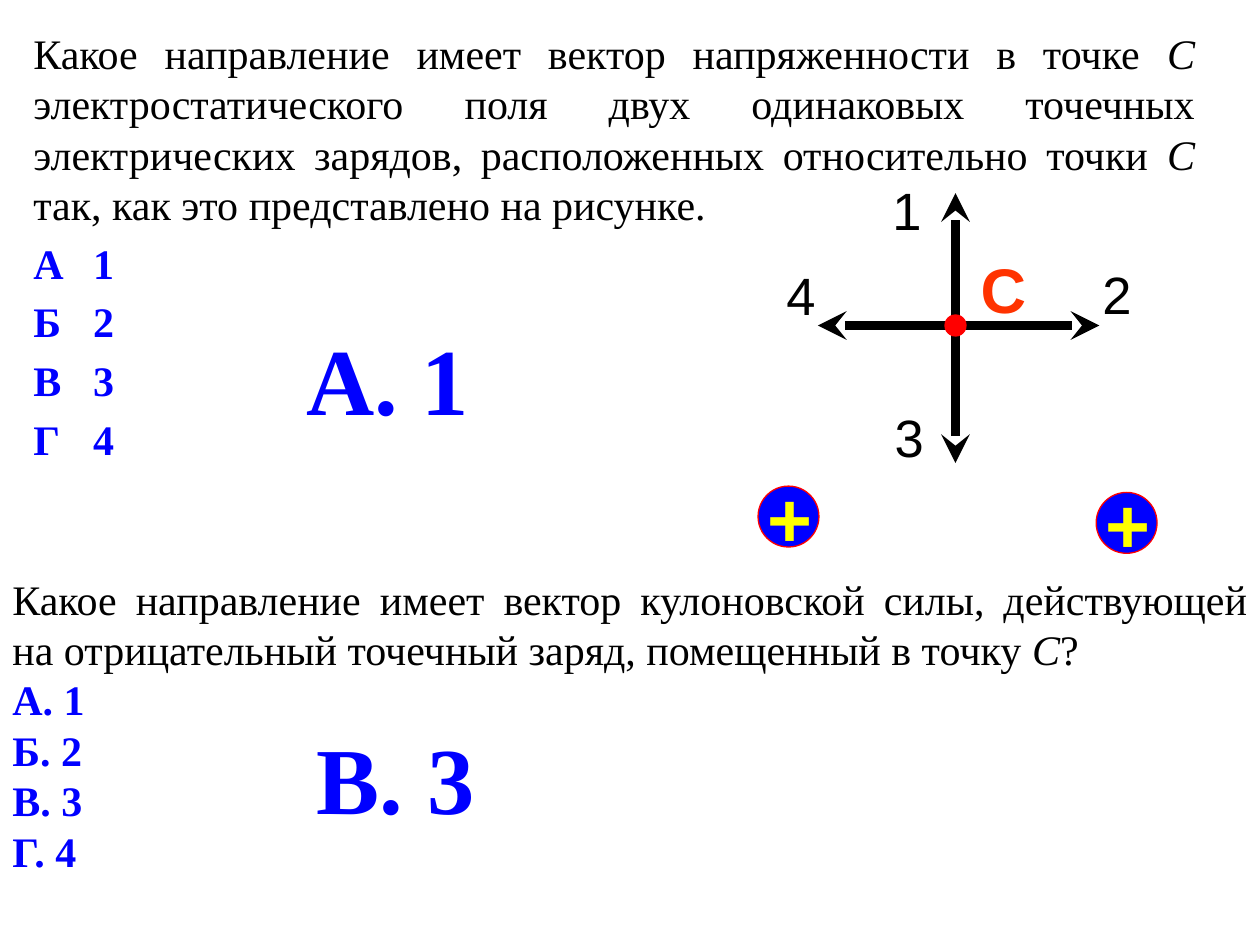
from dataclasses import dataclass

from lxml.etree import SubElement
from pptx import Presentation
from pptx.dml.color import RGBColor
from pptx.enum.shapes import MSO_CONNECTOR as Connector, MSO_SHAPE as Shape
from pptx.enum.text import MSO_ANCHOR as Anchor, PP_ALIGN as Align
from pptx.oxml.ns import qn
from pptx.util import Inches, Pt

COLUMNS, ROWS = 120, 90  # square grid cells, twelve to the inch


@dataclass(frozen=True)
class Theme:
    serif: str = "Times New Roman"
    sans: str = "Arial"
    black: str = "000000"
    blue: str = "0000FF"
    red: str = "FF0000"
    orange: str = "FF3300"
    yellow: str = "FFFF00"
    body: int = 24
    number: int = 30
    point: int = 36
    sign: int = 44
    answer: int = 54
    leading: float = 1.2


THEME = Theme()


def grid(*cells):
    return [Inches(cell * 10 / COLUMNS) for cell in cells]


def add_run(paragraph, text, size, color, font=THEME.serif, bold=False, italic=False):
    run = paragraph.add_run()
    run.text = text
    run.font.name = font
    run.font.size = Pt(size)
    run.font.bold = bold
    run.font.italic = italic
    run.font.color.rgb = RGBColor.from_string(color)


def add_box(slide, cells, wrap=True, margins=True):
    frame = slide.shapes.add_textbox(*grid(*cells)).text_frame
    frame.word_wrap = wrap
    if not margins:
        frame.margin_left = frame.margin_right = 0
        frame.margin_top = frame.margin_bottom = 0
    return frame


def add_tab_stop(paragraph, column):
    tabs = SubElement(paragraph._p.get_or_add_pPr(), qn("a:tabLst"))
    SubElement(tabs, qn("a:tab"), pos=str(grid(column)[0]), algn="l")


def add_question(slide, cells, parts, options, gap=0, tab=None):
    """A justified question with the point's name in italics, then its options."""
    frame = add_box(slide, cells)
    question = frame.paragraphs[0]
    for index, part in enumerate(parts):
        if index:
            add_run(question, "С", THEME.body, THEME.black, italic=True)
        add_run(question, part, THEME.body, THEME.black)
    for option in options:
        paragraph = frame.add_paragraph()
        paragraph.space_before = Pt(gap)
        if tab:
            add_tab_stop(paragraph, tab)
        add_run(paragraph, option, THEME.body, THEME.blue, bold=True)
    for paragraph in frame.paragraphs:
        paragraph.alignment = Align.JUSTIFY
        paragraph.line_spacing = Pt(THEME.body * THEME.leading)


def add_answer(slide, left, top, text):
    paragraph = add_box(slide, (left, top, 21, 12)).paragraphs[0]
    paragraph.line_spacing = Pt(THEME.answer * THEME.leading)
    add_run(paragraph, text, THEME.answer, THEME.blue, bold=True)


def add_double_arrow(slide, *ends):
    arrow = slide.shapes.add_connector(Connector.STRAIGHT, *grid(*ends))
    arrow.line.width = Pt(5.5)
    arrow.line.color.rgb = RGBColor.from_string(THEME.black)
    line = arrow.line._get_or_add_ln()
    for end in ("a:headEnd", "a:tailEnd"):
        SubElement(line, qn(end), type="stealth", w="med", len="med")
    SubElement(arrow._element.spPr, qn("a:effectLst"))


def add_circle(slide, left, top, diameter, fill):
    circle = slide.shapes.add_shape(Shape.OVAL, *grid(left, top, diameter, diameter))
    circle.shadow.inherit = False
    circle.fill.solid()
    circle.fill.fore_color.rgb = RGBColor.from_string(fill)
    circle.line.color.rgb = RGBColor.from_string(THEME.red)
    circle.line.width = Pt(0.75)
    return circle


def add_charge(slide, left, top):
    frame = add_circle(slide, left, top, 5.8, THEME.blue).text_frame
    frame.word_wrap = False
    frame.vertical_anchor = Anchor.MIDDLE
    frame.margin_left, frame.margin_right = Inches(0.1), Inches(0.08)
    frame.margin_top = frame.margin_bottom = Inches(0.04)
    paragraph = frame.paragraphs[0]
    paragraph.alignment = Align.CENTER
    add_run(paragraph, "+", THEME.sign, THEME.yellow, THEME.sans, bold=True)


def add_diagram(slide):
    # Name of the point
    label = add_box(slide, (92.2, 23.3, 8, 8.4)).paragraphs[0]
    add_run(label, "С", THEME.point, THEME.orange, THEME.sans, bold=True)

    # Four directions crossing at the point
    x, y = 91, 31
    add_double_arrow(slide, x - 13.1, y, x + 13.7, y)
    add_double_arrow(slide, x, y - 12.6, x, y + 13.1)
    numbers = {"1": (85, 17), "2": (105, 25), "3": (85.2, 38.6), "4": (74.9, 25.1)}
    for number, place in numbers.items():
        frame = add_box(slide, (*place, 2.8, 6), wrap=False, margins=False)
        add_run(frame.paragraphs[0], number, THEME.number, THEME.black, THEME.sans)
    add_circle(slide, x - 1, y - 1, 2, THEME.red)

    # Two equal positive charges
    add_charge(slide, 72.2, 46.3)
    add_charge(slide, 104.4, 46.9)


def main():
    presentation = Presentation()
    presentation.slide_width, presentation.slide_height = grid(COLUMNS, ROWS)
    slide = presentation.slides.add_slide(presentation.slide_layouts[6])

    # Field direction
    add_question(
        slide, (2, 2, 113, 43.8),
        ["Какое направление имеет вектор напряженности в точке ",
         " электростатического поля двух одинаковых точечных электрических зарядов, "
         "расположенных относительно точки ",
         " так, как это представлено на рисунке."],
        ["А\t1", "Б\t2", "В\t3", "Г\t4"], gap=4.8, tab=5.7)
    add_diagram(slide)

    # Force direction
    add_question(
        slide, (0, 54, COLUMNS, 30),
        ["Какое направление имеет вектор кулоновской силы, действующей на "
         "отрицательный точечный заряд, помещенный в точку ", "?"],
        ["А. 1", "Б. 2", "В. 3", "Г. 4"])

    # Answers
    add_answer(slide, 28, 30, "А. 1")
    add_answer(slide, 29, 68, "В. 3")

    presentation.save("out.pptx")


if __name__ == "__main__":
    main()
